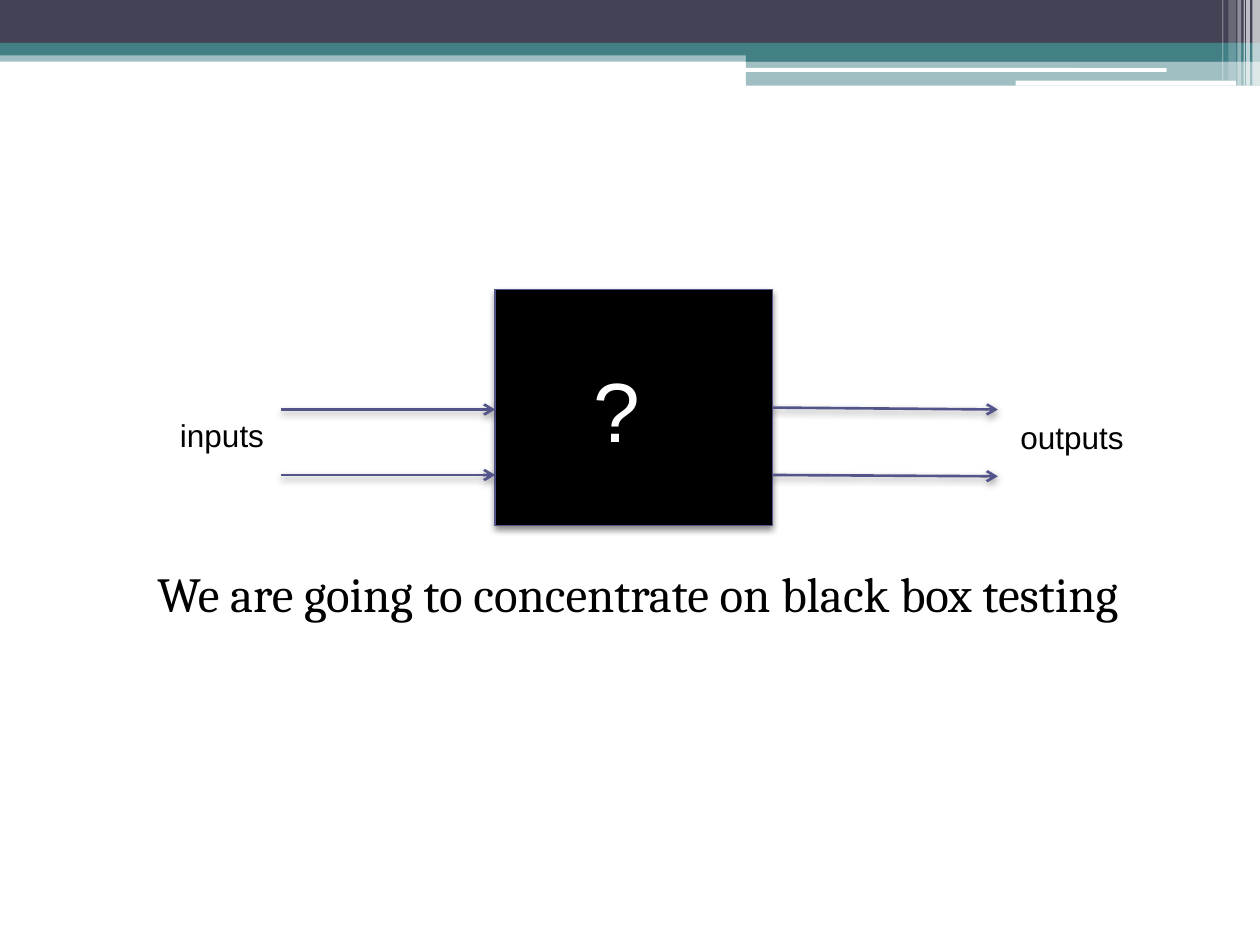
from dataclasses import dataclass
from typing import NamedTuple, Optional

from lxml import etree
from pptx import Presentation
from pptx import util as u
from pptx.dml.color import RGBColor
from pptx.enum import shapes, text
from pptx.oxml.ns import qn

COLS, ROWS = 10, 7.5  # square grid over the slide
CELL = u.Inches(1)


@dataclass(frozen=True)
class Theme:
    dark: str = "424456"
    teal: str = "438086"
    white: str = "FFFFFF"
    black: str = "000000"
    violet: str = "53548A"
    sans: str = "Arial"
    serif: str = "Cambria"
    label: float = 18
    body: float = 28
    symbol: float = 48
    outline: float = 0.75
    arrow: float = 1.5


THEME = Theme()


class Frame(NamedTuple):
    """Left, top, width and height in grid cells."""
    x: float
    y: float
    w: float
    h: float

    def emu(self) -> list[int]:
        return [grid(v) for v in self]


class Bar(NamedTuple):
    frame: Frame
    color: str
    alpha: int = 100
    rounded: bool = False


class Label(NamedTuple):
    words: str
    frame: Frame
    size: float = THEME.label
    color: str = THEME.black
    align: text.PP_ALIGN = text.PP_ALIGN.LEFT


def grid(cells: float) -> int:
    return round(cells * CELL)


BANNER = [
    Bar(Frame(0, 0.4, COLS, 0.09), THEME.teal, 50),
    Bar(Frame(0, 0, COLS, 0.34), THEME.dark),
    Bar(Frame(0, 0.34, COLS, 0.1), THEME.teal),
    Bar(Frame(5.92, 0.39, 4.08, 0.1), THEME.teal),
    Bar(Frame(5.92, 0.48, 4.08, 0.2), THEME.teal, 50),
    Bar(Frame(5.91, 0.54, 3.35, 0.03), THEME.white, rounded=True),
    Bar(Frame(8.06, 0.64, 1.75, 0.04), THEME.white, rounded=True),
] + [
    Bar(Frame(x, 0, w, h), THEME.white, alpha)
    for x, w, h, alpha in [
        (9.94, 0.06, 0.68, 65), (9.89, 0.03, 0.68, 65), (9.87, 0.01, 0.68, 60),
        (9.82, 0.03, 0.68, 40), (9.75, 0.06, 0.64, 20), (9.7, 0.01, 0.64, 30),
    ]
]
BOX = Frame(3.93, 2.3, 2.2, 1.87)
BOX_RIGHT = BOX.x + BOX.w
INPUT_X, OUTPUT_X = 2.23, 7.92
UPPER_Y, LOWER_Y = 3.25, 3.77
LABELS = [
    Label("?", Frame(4.35, 2.8, 1.1, 0.97), THEME.symbol, THEME.white,
          text.PP_ALIGN.CENTER),
    Label("inputs", Frame(1.33, 3.25, 1.19, 0.43)),
    Label("outputs", Frame(8, 3.27, 1.5, 0.4)),
]


def write(tf, words: str, *, size: float, font: str = THEME.sans,
          color: str = THEME.black, align=text.PP_ALIGN.LEFT):
    tf.word_wrap = True
    p = tf.paragraphs[0]
    p.alignment = align
    r = p.add_run()
    r.text = words
    r.font.size, r.font.name = u.Pt(size), font
    r.font.color.rgb = RGBColor.from_string(color)
    return p


def add_shadow(sp, alpha: int, blur: float) -> None:
    effects = etree.SubElement(sp._element.spPr, qn("a:effectLst"))
    shadow = etree.SubElement(
        effects, qn("a:outerShdw"), blurRad=str(u.Pt(blur)), dist=str(u.Pt(2)),
        dir=str(90 * 60000), rotWithShape="0")
    color = etree.SubElement(shadow, qn("a:srgbClr"), val=THEME.black)
    etree.SubElement(color, qn("a:alpha"), val=str(alpha * 1000))


def add_bar(s, bar: Bar) -> None:
    kind = shapes.MSO_SHAPE.ROUNDED_RECTANGLE if bar.rounded else shapes.MSO_SHAPE.RECTANGLE
    sp = s.shapes.add_shape(kind, *bar.frame.emu())
    sp.shadow.inherit = False
    sp.fill.solid()
    sp.fill.fore_color.rgb = RGBColor.from_string(bar.color)
    sp.line.fill.background()
    if bar.alpha < 100:
        color = sp._element.spPr.find(qn("a:solidFill"))[0]
        etree.SubElement(color, qn("a:alpha"), val=str(bar.alpha * 1000))


def add_black_box(s):
    sp = s.shapes.add_shape(shapes.MSO_SHAPE.RECTANGLE, *BOX.emu())
    sp.fill.solid()
    sp.fill.fore_color.rgb = RGBColor.from_string(THEME.black)
    sp.line.color.rgb = RGBColor.from_string(THEME.violet)
    sp.line.width = u.Pt(THEME.outline)
    add_shadow(sp, 45, 4)
    return sp


def add_arrow(s, x1: float, y1: float, x2: float, y2: float,
              source: Optional[object] = None) -> None:
    """Draw an arrow, leaving the right side of source if one is given."""
    line = s.shapes.add_connector(
        shapes.MSO_CONNECTOR.STRAIGHT, *map(grid, (x1, y1, x2, y2)))
    if source is not None:
        line.begin_connect(source, 3)
    line.line.color.rgb = RGBColor.from_string(THEME.violet)
    line.line.width = u.Pt(THEME.arrow)
    etree.SubElement(line.line._get_or_add_ln(), qn("a:tailEnd"), type="arrow")
    add_shadow(line, 40, 4.1)


def add_label(s, label: Label) -> None:
    sp = s.shapes.add_textbox(*label.frame.emu())
    write(sp.text_frame, label.words, size=label.size, color=label.color,
          align=label.align)


def fill_body(body) -> None:
    body.left, body.top, body.width, body.height = Frame(0.5, 1.92, 9, 4.73).emu()
    tf = body.text_frame
    tf.auto_size = text.MSO_AUTO_SIZE.NONE
    tf.vertical_anchor = text.MSO_ANCHOR.TOP
    tf.margin_top = grid(2.55)
    p = write(tf, "We are going to concentrate on black box testing",
              size=THEME.body, font=THEME.serif, align=text.PP_ALIGN.CENTER)
    p.space_before = u.Pt(3)
    pPr = p._p.get_or_add_pPr()
    pPr.set("marL", str(grid(0.4)))
    pPr.set("indent", str(grid(-0.28)))
    etree.SubElement(pPr, qn("a:buNone"))


def main() -> None:
    prs = Presentation()
    prs.slide_width, prs.slide_height = grid(COLS), grid(ROWS)
    s = prs.slides.add_slide(prs.slide_layouts[1])
    title = s.shapes.title._element
    title.getparent().remove(title)
    fill_body(s.placeholders[1])
    for bar in BANNER:
        add_bar(s, bar)
    box = add_black_box(s)
    for y in (UPPER_Y, LOWER_Y):
        add_arrow(s, INPUT_X, y, BOX.x, y)
    add_arrow(s, BOX_RIGHT, UPPER_Y, OUTPUT_X, UPPER_Y, source=box)
    add_arrow(s, BOX_RIGHT, LOWER_Y, OUTPUT_X, LOWER_Y + 0.01)
    for label in LABELS:
        add_label(s, label)
    prs.save("out.pptx")


if __name__ == "__main__":
    main()
